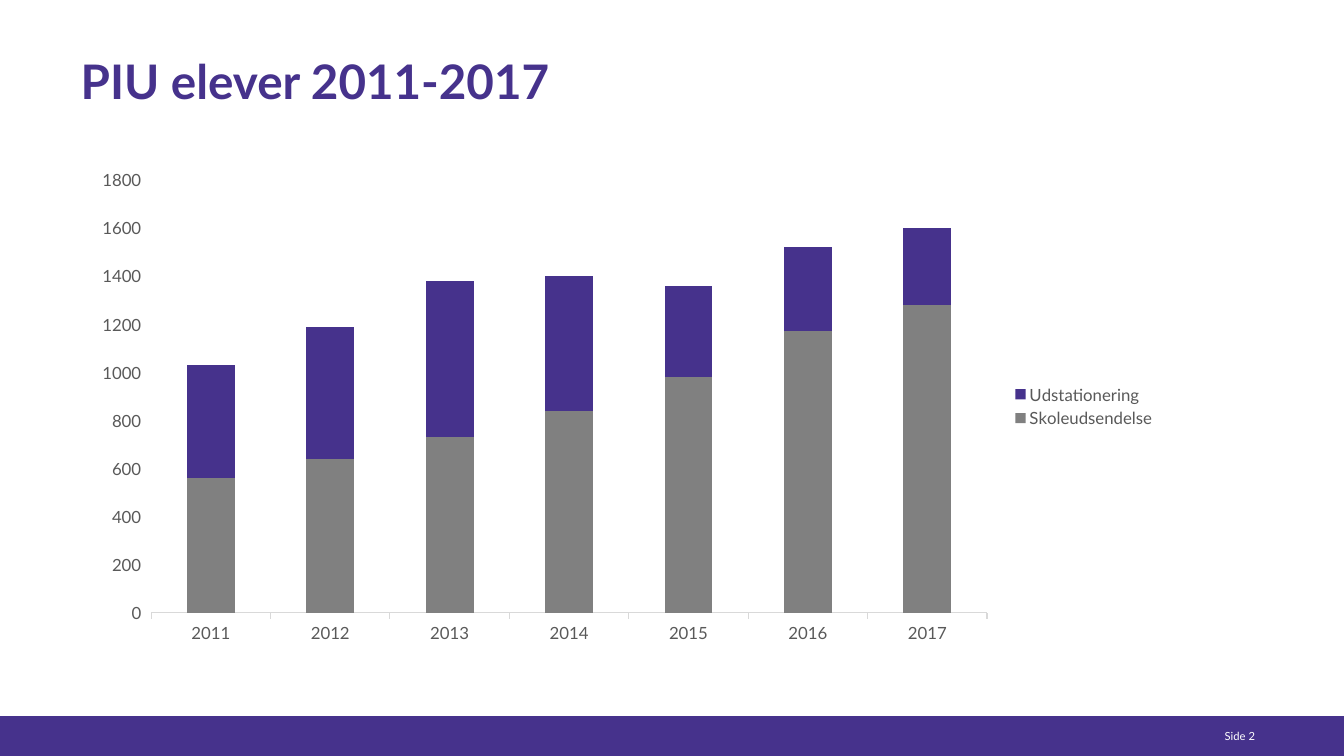
from lxml import etree
from pptx import Presentation
from pptx import util as u
from pptx.chart.data import CategoryChartData
from pptx.dml.color import RGBColor
from pptx.enum import chart as charts, shapes, text
from pptx.oxml import parse_xml
from pptx.oxml.ns import nsdecls, qn

COLOURS = {
    "purple": "46328C",
    "grey": "808080",
    "label": "595959",
    "axis": "D9D9D9",
    "white": "FFFFFF",
}
YEARS = [str(year) for year in range(2011, 2018)]
STUDENTS = {
    "Skoleudsendelse": ("grey", [560, 640, 730, 840, 980, 1170, 1280]),
    "Udstationering": ("purple", [470, 550, 650, 560, 380, 350, 320]),
}
PLOT_AREA = {"x": 0.065, "y": 0.04, "w": 0.77, "h": 0.88}


class SlideBuilder:
    """Holds the style and the current slide, and adds elements to it."""

    font_name = "Lato"

    def __init__(self, presentation):
        self.slide = presentation.slides.add_slide(presentation.slide_layouts[5])

    def colour(self, name):
        return RGBColor.from_string(COLOURS[name])

    def style_font(self, font, size, colour, bold=False):
        font.name = self.font_name
        font.size = u.Pt(size)
        font.bold = bold
        font.color.rgb = self.colour(colour)

    def box(self, left, top, width, height):
        return [u.Pt(length) for length in (left, top, width, height)]

    def fill_text(self, shape, words, size, colour, anchor, bold=False, spacing=None):
        frame = shape.text_frame
        frame.text = words
        frame.word_wrap = True
        frame.auto_size = text.MSO_AUTO_SIZE.NONE
        frame.vertical_anchor = anchor
        frame.margin_left = frame.margin_top = 0
        frame.margin_right = frame.margin_bottom = 0
        paragraph = frame.paragraphs[0]
        paragraph.alignment = text.PP_ALIGN.LEFT
        paragraph.line_spacing = spacing
        self.style_font(paragraph.font, size, colour, bold)

    def add_title(self, words, left, top, width, height):
        title = self.slide.shapes.title
        title.left, title.top, title.width, title.height = self.box(
            left, top, width, height)
        self.fill_text(title, words, 34, "purple", text.MSO_ANCHOR.TOP, True, 0.94)

    def add_label(self, words, left, top, width, height):
        label = self.slide.shapes.add_textbox(*self.box(left, top, width, height))
        self.fill_text(label, words, 8, "white", text.MSO_ANCHOR.BOTTOM)

    def add_band(self, left, top, width, height):
        band = self.slide.shapes.add_shape(
            shapes.MSO_SHAPE.RECTANGLE, *self.box(left, top, width, height))
        band.shadow.inherit = False
        band.fill.solid()
        band.fill.fore_color.rgb = self.colour("purple")
        band.line.fill.background()

    def add_stacked_columns(self, categories, series, left, top, width, height):
        data = CategoryChartData()
        data.categories = categories
        for name, (_, values) in series.items():
            data.add_series(name, values)
        chart = self.slide.shapes.add_chart(
            charts.XL_CHART_TYPE.COLUMN_STACKED,
            *self.box(left, top, width, height), data).chart
        chart.has_title = False
        self.style_font(chart.font, 12, "label")
        plot = chart.plots[0]
        plot.gap_width = 150
        plot.overlap = 100
        plot.vary_by_categories = False
        for column, (colour, _) in zip(plot.series, series.values()):
            column.format.fill.solid()
            column.format.fill.fore_color.rgb = self.colour(colour)
        self.style_axes(chart)
        chart.has_legend = True
        chart.legend.position = charts.XL_LEGEND_POSITION.RIGHT
        chart.legend.include_in_layout = False
        self.style_font(chart.legend.font, 12, "label")
        self.place_plot_area(chart)

    def style_axes(self, chart):
        for axis in (chart.category_axis, chart.value_axis):
            axis.has_major_gridlines = False
            axis.major_tick_mark = charts.XL_TICK_MARK.OUTSIDE
            axis.minor_tick_mark = charts.XL_TICK_MARK.NONE
            self.style_font(axis.tick_labels.font, 12, "label")
        chart.category_axis.format.line.color.rgb = self.colour("axis")
        chart.category_axis.format.line.width = u.Pt(0.75)
        chart.value_axis.format.line.fill.background()
        chart.value_axis.minimum_scale = 0
        chart.value_axis.maximum_scale = 1800
        chart.value_axis.major_unit = 200

    def place_plot_area(self, chart):
        plot_area = chart.element.find(f".//{qn('c:plotArea')}")
        for layout in plot_area.findall(qn("c:layout")):
            plot_area.remove(layout)
        layout = parse_xml(f"<c:layout {nsdecls('c')}><c:manualLayout/></c:layout>")
        settings = {"layoutTarget": "inner", "xMode": "edge", "yMode": "edge"}
        for tag, value in {**settings, **PLOT_AREA}.items():
            etree.SubElement(layout[0], qn(f"c:{tag}"), val=str(value))
        plot_area.insert(0, layout)


def main():
    presentation = Presentation()
    presentation.slide_width = u.Pt(960)
    presentation.slide_height = u.Pt(540)
    builder = SlideBuilder(presentation)
    builder.add_band(0, 511.5, 960, 28.5)
    builder.add_title("PIU elever 2011-2017", 57.6, 40.3, 844.6, 73.4)
    builder.add_stacked_columns(YEARS, STUDENTS, 57.6, 114.5, 775.4, 351.4)
    builder.add_label("Side 2", 874.8, 516.2, 35.3, 14.4)
    presentation.save("out.pptx")


if __name__ == "__main__":
    main()
